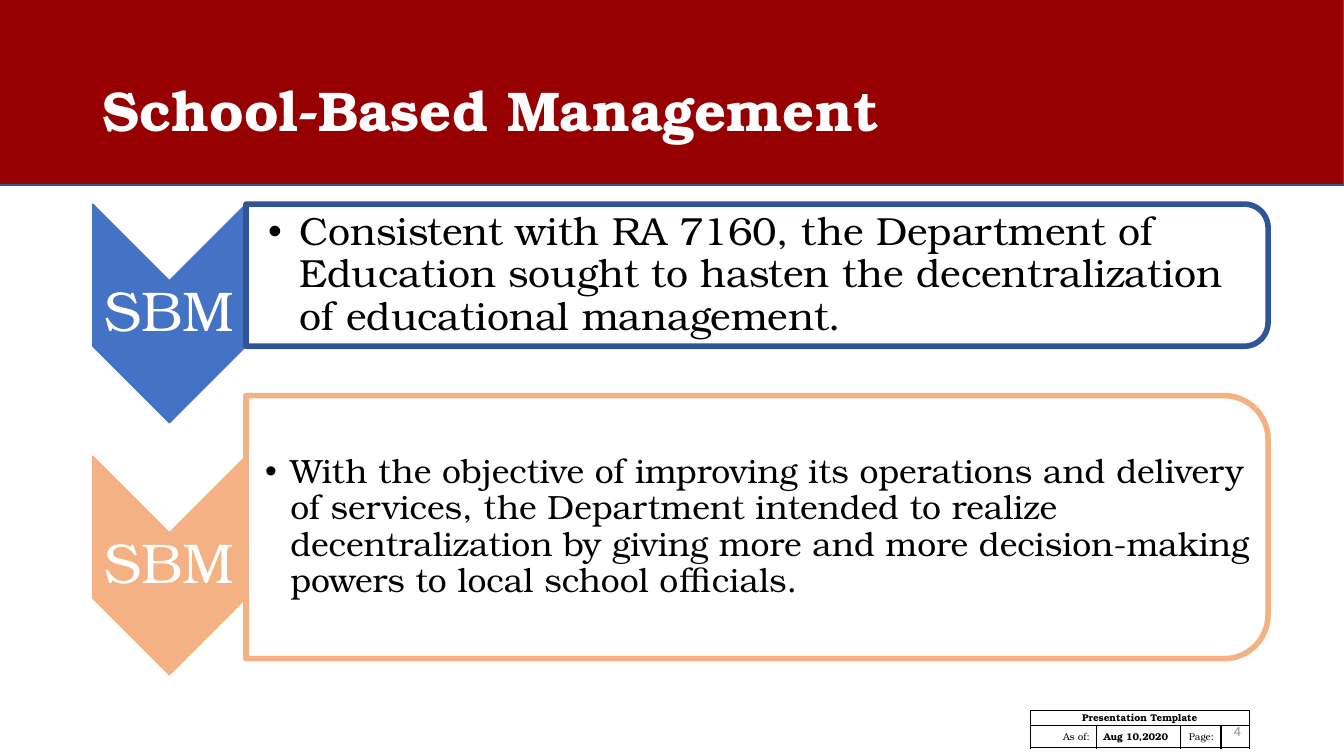
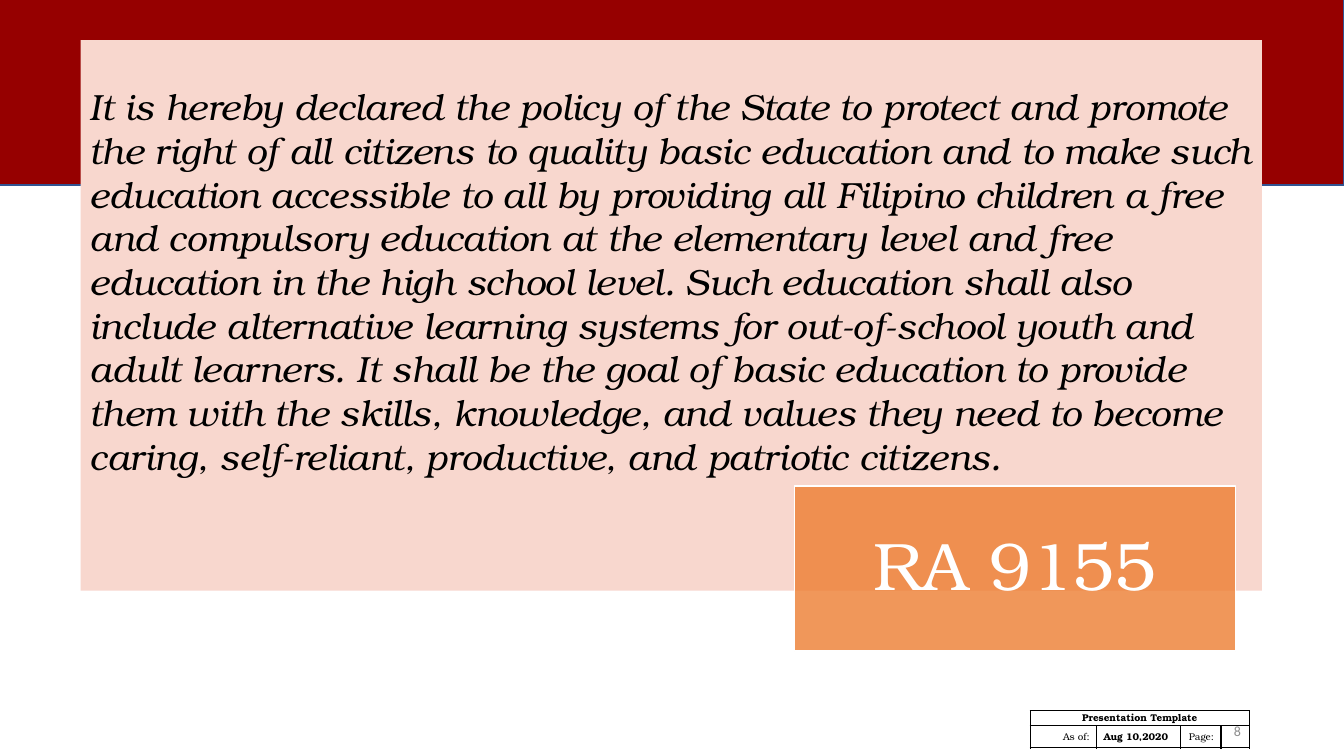
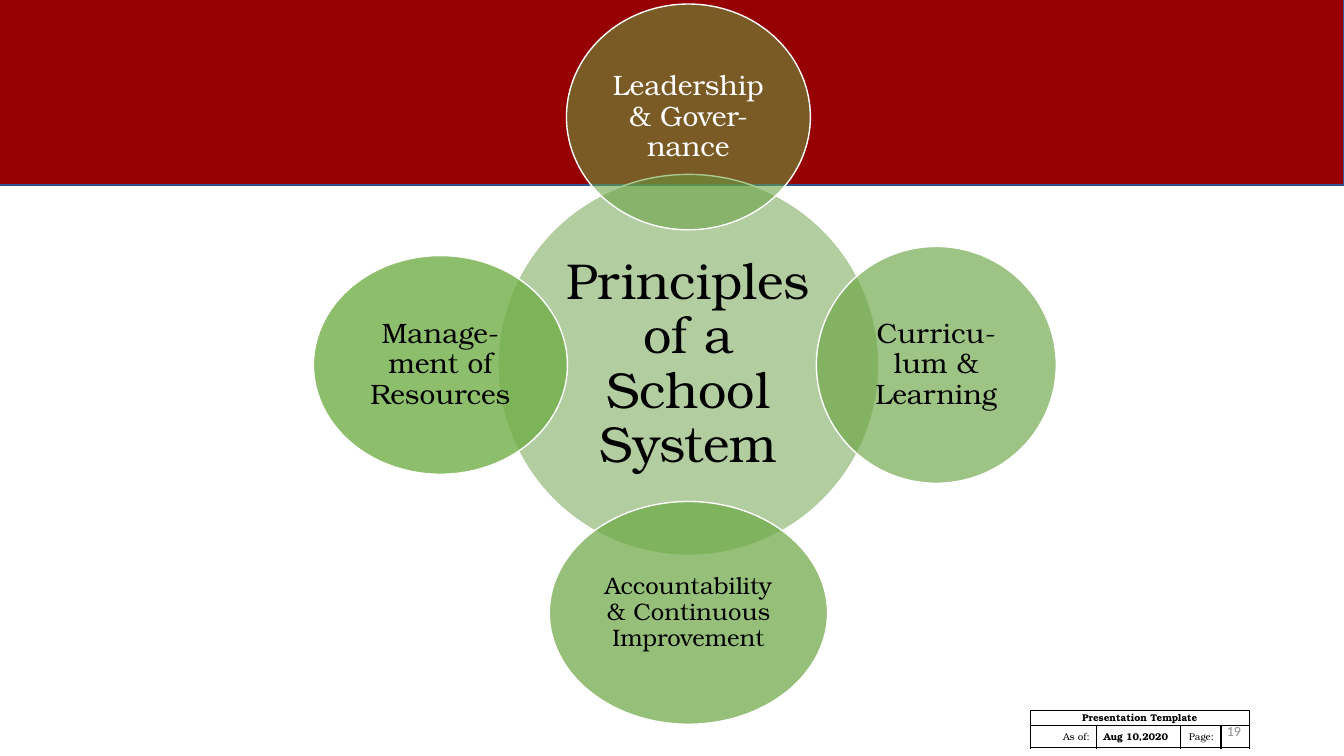
from dataclasses import dataclass

from lxml import etree
from pptx import Presentation
from pptx.dml.color import RGBColor
from pptx.enum.shapes import MSO_SHAPE
from pptx.enum.text import MSO_ANCHOR, MSO_AUTO_SIZE, PP_ALIGN
from pptx.oxml.ns import qn
from pptx.util import Inches, Pt

RECT, OVAL = MSO_SHAPE.RECTANGLE, MSO_SHAPE.OVAL
CHEVRON, ROUND_TOP = MSO_SHAPE.CHEVRON, MSO_SHAPE.ROUND_2_SAME_RECTANGLE
LEFT, CENTER, RIGHT = PP_ALIGN.LEFT, PP_ALIGN.CENTER, PP_ALIGN.RIGHT
TOP, MIDDLE = MSO_ANCHOR.TOP, MSO_ANCHOR.MIDDLE
NO_FIT = MSO_AUTO_SIZE.NONE
TWO_CONTENT, BLANK = 3, 6
WIDTH, HEIGHT = Inches(13.33), Inches(7.5)


@dataclass(frozen=True)
class Theme:
    """Colours, fonts and type sizes of the deck."""
    serif: str = "TeX Gyre Bonum"
    sans: str = "Calibri"
    white: str = "FFFFFF"
    black: str = "000000"
    grey: str = "8C8C8C"
    band: str = "960000"
    band_line: str = "325491"
    blue: str = "4472C4"
    navy: str = "2F5597"
    peach: str = "F4B183"
    blush: str = "F8D7CE"
    orange: str = "ED7D31"
    hub: str = "669D40"
    greens: tuple = ("68A142", "6BA544", "6EA946", "71AE48")
    tag: int = 48
    title: int = 40
    hub_text: int = 36
    quote: int = 26
    page: int = 10
    footer: int = 7


T = Theme()


def cols(n):
    """Return n hundredths of the slide width."""
    return int(WIDTH * n / 100)


def rows(n):
    """Return n hundredths of the slide height."""
    return int(HEIGHT * n / 100)


def box(x, y, w, h):
    """Return left, top, width and height from shares of the slide."""
    return cols(x), rows(y), cols(w), rows(h)


def around(cx, cy, w, h):
    """Return a box of shares from its centre and size."""
    return box(cx - w / 2, cy - h / 2, w, h)


def apply(obj, **values):
    """Set each named value on an object."""
    for name, value in values.items():
        setattr(obj, name, value)


def write(tf, text, size, color=T.black, font=T.serif, align=LEFT, anchor=MIDDLE,
          inset=(0.1, 0.05, 0.1, 0.05), spacing=0.9, bold=False, italic=False, indent=None):
    """Fill a text frame with one formatted paragraph."""
    left, top, right, bottom = map(Inches, inset)
    apply(tf, word_wrap=True, auto_size=NO_FIT, vertical_anchor=anchor, margin_left=left,
          margin_top=top, margin_right=right, margin_bottom=bottom)
    p = tf.paragraphs[0]
    apply(p, alignment=align, line_spacing=spacing, space_before=Pt(0))
    if indent:
        add_bullet(p, indent)
    r = p.add_run()
    r.text = text
    apply(r.font, name=font, size=Pt(size), bold=bold, italic=italic)
    r.font.color.rgb = RGBColor.from_string(color)


def add_bullet(p, indent):
    """Give a paragraph a round bullet with a hanging indent."""
    pPr = p._p.get_or_add_pPr()
    pPr.set("marL", str(Inches(indent)))
    pPr.set("indent", str(-Inches(indent)))
    etree.SubElement(pPr, qn("a:buFont"), typeface="Arial")
    etree.SubElement(pPr, qn("a:buChar"), char="•")


def add_text(s, at, text, size, **style):
    """Add a text box."""
    write(s.shapes.add_textbox(*at).text_frame, text, size, **style)


def add_filled(s, kind, at, fill, line=None, width=1, alpha=100):
    """Add a preset shape with a fill, a line and an opacity in percent."""
    sp = s.shapes.add_shape(kind, *at)
    sp.shadow.inherit = False
    sp.fill.solid()
    sp.fill.fore_color.rgb = RGBColor.from_string(fill)
    if alpha < 100:
        color = sp.element.spPr.find(qn("a:solidFill"))[0]
        etree.SubElement(color, qn("a:alpha"), val=str(int(alpha * 1000)))
    if line:
        sp.line.color.rgb = RGBColor.from_string(line)
        sp.line.width = Pt(width)
    else:
        sp.line.fill.background()
    return sp


def add_turned(s, kind, at, *style, **more):
    """Add a shape turned by 90 degrees that covers the given box."""
    x, y, w, h = at
    turned = x + (w - h) // 2, y + (h - w) // 2, h, w
    add_filled(s, kind, turned, *style, **more).rotation = 90


def place(s, sp, at):
    """Move a placeholder to a box and to the front."""
    apply(sp, **dict(zip(("left", "top", "width", "height"), at)))
    s.shapes.element.append(sp.element)
    return sp.text_frame


def add_borders(cell):
    """Draw thin black borders round a table cell."""
    tcPr = cell._tc.get_or_add_tcPr()
    for side in ("lnL", "lnR", "lnT", "lnB"):
        ln = etree.SubElement(tcPr, qn(f"a:{side}"), w=str(Pt(1)))
        fill = etree.SubElement(ln, qn("a:solidFill"))
        etree.SubElement(fill, qn("a:srgbClr"), val=T.black)


def add_footer(s, number):
    """Add the footer table and the page number."""
    widths, heights = (4.95, 6.23, 3.02, 2.1), (2, 2.93)
    table = s.shapes.add_table(2, 4, *box(76.65, 94, sum(widths), sum(heights))).table
    apply(table, first_row=False, horz_banding=False)
    for column, width in zip(table.columns, widths):
        column.width = cols(width)
    for row, height in zip(table.rows, heights):
        row.height = rows(height)
    for cell in table.iter_cells():
        add_borders(cell)
        cell.fill.background()
        apply(cell, margin_left=0, margin_right=0, margin_top=0, margin_bottom=0)
        etree.SubElement(cell.text_frame.paragraphs[0]._p, qn("a:endParaRPr"),
                         sz=str(T.footer * 100))
    table.cell(0, 0).merge(table.cell(0, 3))
    labels = ((0, 0, "Presentation Template", CENTER, True), (1, 0, "As of:", RIGHT, False),
              (1, 1, "Aug 10,2020", LEFT, True), (1, 2, "Page:", RIGHT, False))
    for row, column, text, align, bold in labels:
        cell = table.cell(row, column)
        write(cell.text_frame, text, T.footer, align=align, bold=bold, spacing=1)
        apply(cell, margin_left=Inches(0.07), margin_right=Inches(0.07), margin_top=0,
              margin_bottom=0, vertical_anchor=MIDDLE if row else TOP)
    add_text(s, box(89.7, 94, 3.38, 5.33), str(number), T.page, color=T.grey, font=T.sans,
             align=RIGHT, spacing=1)


def add_page(prs, layout, number):
    """Add a slide with the shared band and footer."""
    s = prs.slides.add_slide(prs.slide_layouts[layout])
    add_filled(s, RECT, box(-0.1, -0.8, 100.1, 25.3), T.band, T.band_line)
    add_footer(s, number)
    return s


def add_step(s, body, chevron_y, frame_y, frame_h, fill, line, text, size, inset, indent):
    """Add a chevron label with a framed bullet beside it."""
    chevron = box(6.9, chevron_y, 11.4, 28.93)
    add_turned(s, CHEVRON, chevron, fill, fill)
    add_text(s, chevron, "SBM", T.title, color=T.white, align=CENTER,
             inset=(0.03, 0.03, 0.03, 0.03))
    frame = box(18.3, frame_y, 76.05, frame_h)
    add_turned(s, ROUND_TOP, frame, T.white, line, width=4, alpha=90)
    corner = 0.05 * frame[3] / Inches(1)
    write(place(s, body, frame), text, size, indent=indent,
          inset=(inset, 0.02, corner + 0.02, 0.02))


def add_circle(s, at, fill, alpha, text, size, color=T.black, pad=0.03):
    """Add a translucent ellipse with a centred label."""
    sp = add_filled(s, OVAL, at, fill, T.white, alpha=alpha)
    write(sp.text_frame, text, size, color=color, align=CENTER, inset=(pad,) * 4)


def management_slide(prs):
    """Build the slide on school-based management."""
    s = add_page(prs, TWO_CONTENT, 4)
    title, first, second = list(s.placeholders)
    write(place(s, title, box(6.9, 5.33, 86.25, 19.33)), "School-Based Management",
          T.title, color=T.white, bold=True)
    add_step(s, first, 27, 27, 18.8, T.blue, T.navy,
             "Consistent with RA 7160, the Department of Education sought to hasten the "
             "decentralization of educational management.", 28, 0.22, 0.31)
    add_step(s, second, 60.33, 52.33, 34.8, T.peach, T.peach,
             "With the objective of improving its operations and delivery of services, the "
             "Department intended to realize decentralization by giving more and more "
             "decision-making powers to local school officials.", 24, 0.19, 0.25)


def policy_slide(prs):
    """Build the slide that quotes the state policy."""
    s = add_page(prs, BLANK, 8)
    add_filled(s, RECT, box(6, 5.33, 87.9, 72.8), T.blush)
    tag = add_filled(s, RECT, box(59.1, 64.27, 32.85, 21.87), T.orange, T.white, alpha=80)
    write(tag.text_frame, "RA 9155", T.tag, color=T.white, align=CENTER, inset=(0.1,) * 4)
    add_text(s, box(5.93, 10.53, 88.35, 60.13),
             "It is hereby declared the policy of the State to protect and promote the right of "
             "all citizens to quality basic education and to make such education accessible to "
             "all by providing all Filipino children a free and compulsory education at the "
             "elementary level and free education in the high school level. Such education "
             "shall also include alternative learning systems for out-of-school youth and adult "
             "learners. It shall be the goal of basic education to provide them with the "
             "skills, knowledge, and values they need to become caring, self-reliant, "
             "productive, and patriotic citizens.", T.quote, anchor=TOP, italic=True, spacing=1)


def principles_slide(prs):
    """Build the slide with four principles round a hub."""
    s = add_page(prs, BLANK, 19)
    cx, cy, orbit_x, orbit_y = 51.22, 48.27, 18.45, 32.8
    add_circle(s, around(cx, cy, 28.35, 50.4), T.hub, 50, "Principles of a School System",
               T.hub_text, pad=0.05)
    principles = (
        (0, -1, 18.15, 29.87, "Leadership & Gover-nance", 20, T.white),
        (1, 0, 17.85, 31.33, "Curricu-lum & Learning", 20, T.black),
        (0, 1, 20.7, 29.47, "Accountability & Continuous Improvement", 17, T.black),
        (-1, 0, 18.9, 28.93, "Manage-ment of Resources", 20, T.black),
    )
    for i, (dx, dy, w, h, text, size, color) in enumerate(principles):
        at = around(cx + dx * orbit_x, cy + dy * orbit_y, w, h)
        add_circle(s, at, T.greens[i], 57.5 + 7.5 * i, text, size, color)


def main():
    """Build and save the deck."""
    prs = Presentation()
    apply(prs, slide_width=WIDTH, slide_height=HEIGHT)
    for build in (management_slide, policy_slide, principles_slide):
        build(prs)
    prs.save("out.pptx")


if __name__ == "__main__":
    main()
